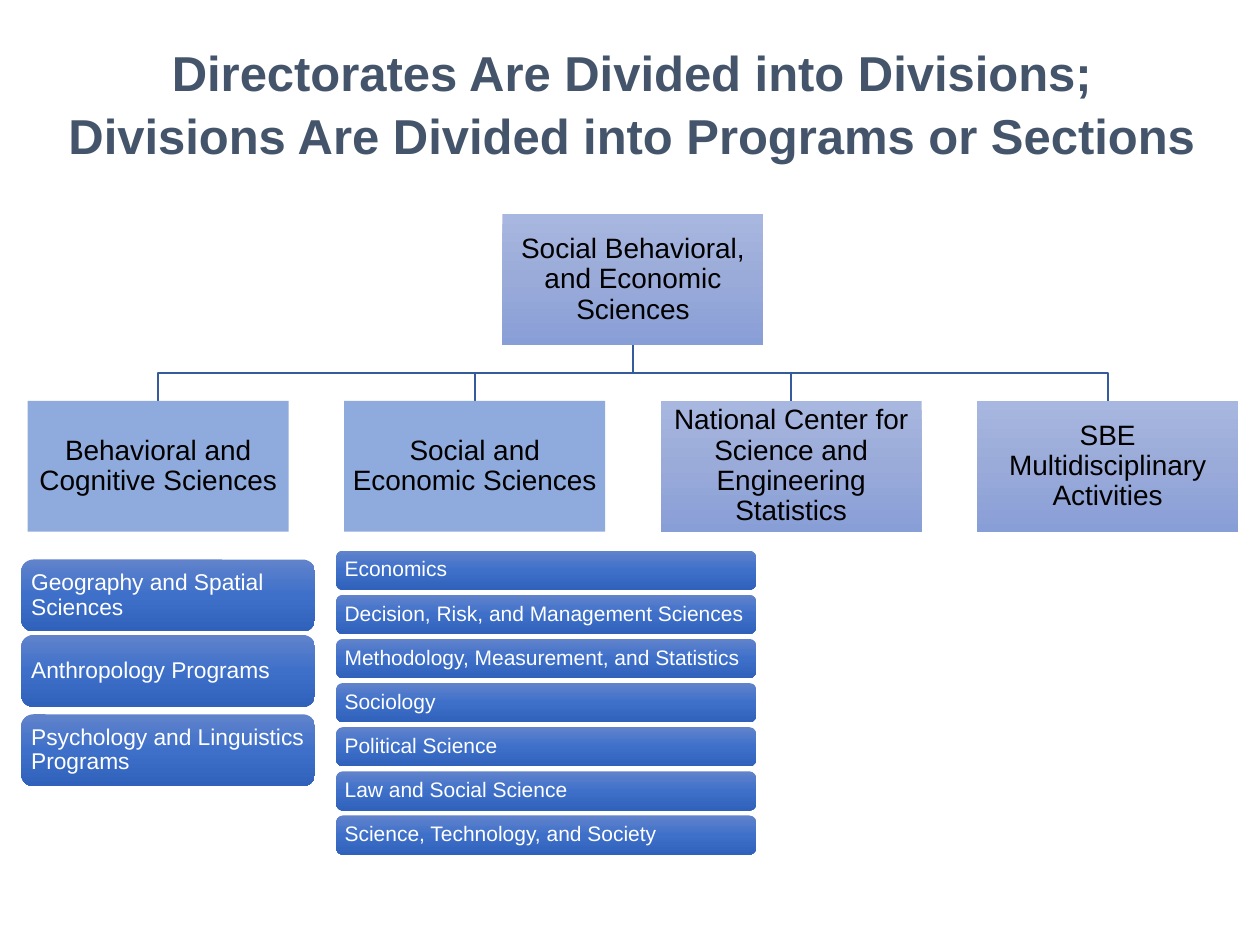
from copy import deepcopy

from pptx import Presentation
from pptx import util as u
from pptx.dml.color import RGBColor
from pptx.enum import shapes, text
from pptx.oxml.ns import qn

FONT = "Arial"
PALE = ("A8B7DF", "9AABD9", "889ED7")
BLUE = ("6183CB", "3E70CA", "3062BB")
FLAT = ("8FAADC",)

BOX_W, BOX_H = 5.26, 2.64
ROOT_LEFT, ROOT_TOP = 10.13, 4.32
DIVISION_LEFT, DIVISION_TOP, DIVISION_STEP = 0.56, 8.08, 6.38

TITLE = (
    "Directorates Are Divided into Divisions;",
    "Divisions Are Divided into Programs or Sections",
)
DIVISIONS = (
    ("Behavioral and Cognitive Sciences", FLAT),
    ("Social and Economic Sciences", FLAT),
    ("National Center for Science and Engineering Statistics", PALE),
    ("SBE Multidisciplinary Activities", PALE),
)
COGNITIVE_PROGRAMS = (
    (11.28, "Geography and Spatial Sciences"),
    (12.8, "Anthropology Programs"),
    (14.4, "Psychology and Linguistics Programs"),
)
ECONOMIC_PROGRAMS = (
    "Economics",
    "Decision, Risk, and Management Sciences",
    "Methodology, Measurement, and Statistics",
    "Sociology",
    "Political Science",
    "Law and Social Science",
    "Science, Technology, and Society",
)


def rgb(value):
    return RGBColor.from_string(value)


def add_run(p, words, size, color, bold=False):
    r = p.add_run()
    r.text = words
    r.font.name = FONT
    r.font.size = u.Pt(size)
    r.font.bold = bold
    r.font.color.rgb = rgb(color)


def set_margins(tf, side, end):
    tf.margin_left = tf.margin_right = u.Cm(side)
    tf.margin_top = tf.margin_bottom = u.Cm(end)


def paint(sp, colors):
    if len(colors) == 1:
        sp.fill.solid()
        sp.fill.fore_color.rgb = rgb(colors[0])
        return
    sp.fill.gradient()
    sp.fill.gradient_angle = 270
    stops = sp.element.spPr.find(qn("a:gradFill")).find(qn("a:gsLst"))
    stops.insert(1, deepcopy(stops[0]))
    for stop, color, position in zip(sp.fill.gradient_stops, colors, (0, 0.5, 1)):
        stop.color.rgb = rgb(color)
        stop.position = position


def add_title(s):
    sp = s.shapes.title
    sp.left, sp.top = u.Cm(1.09), u.Cm(0.64)
    sp.width, sp.height = u.Cm(23.29), u.Cm(3.18)
    tf = sp.text_frame
    tf.auto_size = text.MSO_AUTO_SIZE.NONE
    tf.vertical_anchor = text.MSO_ANCHOR.TOP
    tf.word_wrap = True
    set_margins(tf, 0, 0.13)
    p = tf.paragraphs[0]
    p.alignment = text.PP_ALIGN.CENTER
    p.line_spacing = 1.07
    add_run(p, TITLE[0], 28, "44546A", True)
    p.add_line_break()
    add_run(p, TITLE[1], 28, "44546A", True)


def add_box(s, kind, box, words, colors, size, color, align, margins):
    sp = s.shapes.add_shape(kind, *(u.Cm(v) for v in box))
    sp.shadow.inherit = False
    paint(sp, colors)
    sp.line.fill.background()
    tf = sp.text_frame
    tf.word_wrap = True
    tf.vertical_anchor = text.MSO_ANCHOR.MIDDLE
    set_margins(tf, *margins)
    p = tf.paragraphs[0]
    p.alignment = align
    p.line_spacing = 0.9
    add_run(p, words, size, color)


def add_unit(s, left, top, words, colors):
    add_box(s, shapes.MSO_SHAPE.RECTANGLE, (left, top, BOX_W, BOX_H), words,
            colors, 16, "000000", text.PP_ALIGN.CENTER, (0.03, 0.03))


def add_program(s, box, words, size, margin):
    add_box(s, shapes.MSO_SHAPE.ROUNDED_RECTANGLE, box, words,
            BLUE, size, "FFFFFF", text.PP_ALIGN.LEFT, (margin, 0.1))


def add_branch(s, division_left):
    start_x, start_y = ROOT_LEFT + BOX_W / 2, ROOT_TOP + BOX_H
    end_x = division_left + BOX_W / 2
    middle_y = (start_y + DIVISION_TOP) / 2
    fb = s.shapes.build_freeform(u.Cm(start_x), u.Cm(start_y))
    points = ((start_x, middle_y), (end_x, middle_y), (end_x, DIVISION_TOP))
    fb.add_line_segments([(u.Cm(x), u.Cm(y)) for x, y in points], close=False)
    sp = fb.convert_to_shape()
    sp.shadow.inherit = False
    sp.fill.background()
    sp.line.color.rgb = rgb("365B9D")
    sp.line.width = u.Pt(1)


def main():
    prs = Presentation()
    prs.slide_width, prs.slide_height = u.Cm(25.4), u.Cm(19.05)
    s = prs.slides.add_slide(prs.slide_layouts[5])
    add_title(s)

    lefts = [DIVISION_LEFT + DIVISION_STEP * i for i in range(len(DIVISIONS))]
    for left in reversed(lefts):
        add_branch(s, left)
    add_unit(s, ROOT_LEFT, ROOT_TOP, "Social Behavioral, and Economic Sciences", PALE)
    for left, (words, colors) in zip(lefts, DIVISIONS):
        add_unit(s, left, DIVISION_TOP, words, colors)

    for top, words in COGNITIVE_PROGRAMS:
        add_program(s, (0.43, top, 5.92, 1.45), words, 13, 0.13)
    for i, words in enumerate(ECONOMIC_PROGRAMS):
        add_program(s, (6.78, 11.1 + 0.89 * i, 8.46, 0.79), words, 12, 0.13)

    prs.save("out.pptx")


if __name__ == "__main__":
    main()
